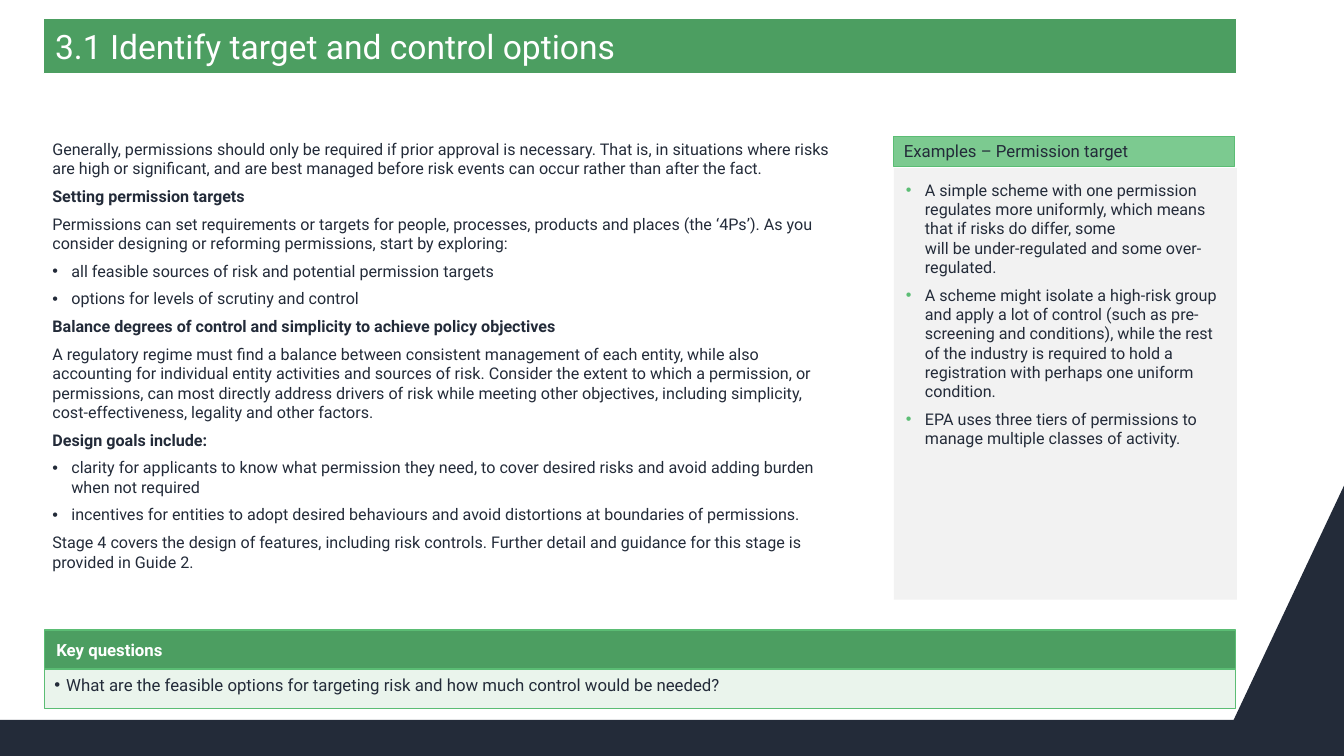
from dataclasses import dataclass

from lxml import etree
from pptx import Presentation
from pptx import util as u
from pptx.dml.color import RGBColor
from pptx.enum import shapes, text
from pptx.oxml.ns import qn

TITLE = "3.1 Identify target and control options"

GUIDANCE = [
    ("plain", "Generally, permissions should only be required if prior approval is necessary. That is, in situations where risks are high or significant, and are best managed before risk events can occur rather than after the fact."),
    ("heading", "Setting permission targets"),
    ("plain", "Permissions can set requirements or targets for people, processes, products and places (the ‘4Ps’). As you consider designing or reforming permissions, start by exploring:"),
    ("bullet", "all feasible sources of risk and potential permission targets"),
    ("bullet", "options for levels of scrutiny and control"),
    ("heading", "Balance degrees of control and simplicity to achieve policy objectives"),
    ("plain", "A regulatory regime must find a balance between consistent management of each entity, while also accounting for individual entity activities and sources of risk. Consider the extent to which a permission, or permissions, can most directly address drivers of risk while meeting other objectives, including simplicity, cost-effectiveness, legality and other factors."),
    ("heading", "Design goals include:"),
    ("bullet", "clarity for applicants to know what permission they need, to cover desired risks and avoid adding burden when not required"),
    ("bullet", "incentives for entities to adopt desired behaviours and avoid distortions at boundaries of permissions."),
    ("plain", "Stage 4 covers the design of features, including risk controls. Further detail and guidance for this stage is provided in Guide 2."),
]

EXAMPLES_TITLE = [("plain", "Examples – Permission target")]
EXAMPLES = [
    ("bullet", "A simple scheme with one permission regulates more uniformly, which means that if risks do differ, some\nwill be under-regulated and some over-regulated."),
    ("bullet", "A scheme might isolate a high-risk group and apply a lot of control (such as pre-screening and conditions), while the rest of the industry is required to hold a registration with perhaps one uniform condition."),
    ("bullet", "EPA uses three tiers of permissions to manage multiple classes of activity."),
]

KEY_TITLE = [("heading", "Key questions")]
KEY_QUESTIONS = [("bullet", "What are the feasible options for targeting risk and how much control would be needed?")]


@dataclass(frozen=True)
class Theme:
    font: str = "Roboto"
    ink: str = "232B39"
    white: str = "FFFFFF"
    green: str = "4C9E61"
    accent: str = "5BBD74"
    light_green: str = "7CCA90"
    pale_green: str = "EAF4EC"
    grey: str = "F2F2F2"
    title_size: float = 24
    label_size: float = 12
    body_size: float = 11.5


THEME = Theme()
WIDTH, HEIGHT = 33.87, 19.05
FOOTER_TOP, SLOPE_LEFT, SLOPE_TOP = 18.14, 31.09, 12.24
KEY_LEFT, KEY_WIDTH = 1.12, 30.02
EXAMPLES_LEFT = 22.53


def paint(shape, fill, line=None, weight=1):
    shape.shadow.inherit = False
    shape.fill.solid()
    shape.fill.fore_color.rgb = RGBColor.from_string(fill)
    if line:
        shape.line.color.rgb = RGBColor.from_string(line)
        shape.line.width = u.Pt(weight)
    else:
        shape.line.fill.background()


def add_bullet(para, indent, color):
    properties = para._p.get_or_add_pPr()
    properties.set("marL", str(u.Cm(indent)))
    properties.set("indent", str(-u.Cm(indent)))
    if color:
        holder = etree.SubElement(properties, qn("a:buClr"))
        etree.SubElement(holder, qn("a:srgbClr"), val=color)
    etree.SubElement(properties, qn("a:buFont"), typeface="Arial")
    etree.SubElement(properties, qn("a:buChar"), char="•")


def write(shape, lines, size=THEME.body_size, color=THEME.ink, before=0, after=0,
          middle=False, insets=(0.25, 0.13), indent=0.48, bullet_color=None):
    frame = shape.text_frame
    frame.word_wrap = True
    frame.vertical_anchor = text.MSO_ANCHOR.MIDDLE if middle else text.MSO_ANCHOR.TOP
    frame.margin_left = frame.margin_right = u.Cm(insets[0])
    frame.margin_top = frame.margin_bottom = u.Cm(insets[1])
    for index, (style, words) in enumerate(lines):
        para = frame.add_paragraph() if index else frame.paragraphs[0]
        para.alignment = text.PP_ALIGN.LEFT
        para.space_before, para.space_after = u.Pt(before), u.Pt(after)
        if style == "bullet":
            add_bullet(para, indent, bullet_color)
        for part, piece in enumerate(words.split("\n")):
            if part:
                para.add_line_break()
            span = para.add_run()
            span.text = piece
            span.font.name = THEME.font
            span.font.size = u.Pt(size)
            span.font.bold = style == "heading"
            span.font.color.rgb = RGBColor.from_string(color)


def add_panel(page, place, lines, fill, line=None, weight=1, **format):
    box = page.shapes.add_shape(shapes.MSO_SHAPE.RECTANGLE, *map(u.Cm, place))
    paint(box, fill, line, weight)
    write(box, lines, **format)


def add_footer(page):
    corners = [(0, FOOTER_TOP), (0, HEIGHT), (WIDTH, HEIGHT), (WIDTH, SLOPE_TOP)]
    builder = page.shapes.build_freeform(u.Cm(SLOPE_LEFT), u.Cm(FOOTER_TOP))
    builder.add_line_segments([(u.Cm(x), u.Cm(y)) for x, y in corners], close=True)
    paint(builder.convert_to_shape(), THEME.ink)


def main():
    deck = Presentation()
    deck.slide_width, deck.slide_height = u.Cm(WIDTH), u.Cm(HEIGHT)
    page = deck.slides.add_slide(deck.slide_layouts[6])
    add_footer(page)
    add_panel(page, (1.07, 3.38, 20.17, 12.22), GUIDANCE, THEME.white, before=3, after=3)
    add_panel(page, (KEY_LEFT, 15.88, KEY_WIDTH, 0.97), KEY_TITLE, THEME.green, THEME.accent,
              size=THEME.label_size, color=THEME.white, middle=True, insets=(0.3, 0))
    add_panel(page, (KEY_LEFT, 16.87, KEY_WIDTH, 0.99), KEY_QUESTIONS, THEME.pale_green, THEME.accent,
              size=THEME.label_size, before=2, after=2, indent=0.3)
    add_panel(page, (1.09, 0.46, 30.07, 1.4), [("plain", TITLE)], THEME.green, THEME.white,
              size=THEME.title_size, color=THEME.white, middle=True, insets=(0.3, 0.03))
    add_panel(page, (EXAMPLES_LEFT, 4.24, 8.64, 10.87), EXAMPLES, THEME.grey,
              before=6, insets=(0.3, 0.3), bullet_color=THEME.accent)
    add_panel(page, (EXAMPLES_LEFT, 3.43, 8.59, 0.76), EXAMPLES_TITLE, THEME.light_green, THEME.accent,
              weight=0.75, size=THEME.label_size, middle=True)
    deck.save("out.pptx")


if __name__ == "__main__":
    main()
